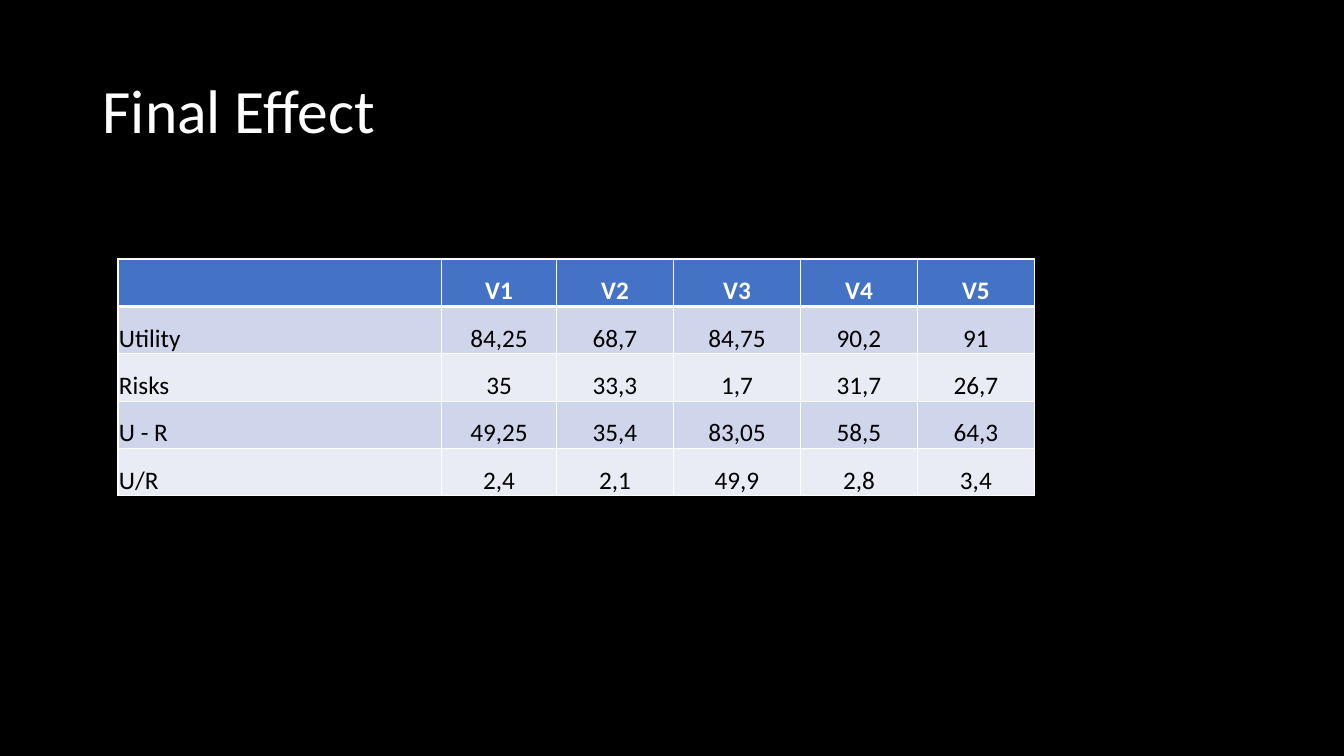
from dataclasses import dataclass

from lxml import etree
from pptx import Presentation
from pptx import util as u
from pptx.dml.color import RGBColor
from pptx.enum import text
from pptx.oxml import ns

HEADING = "Final Effect"
EFFECTS = [
    ("", "V1", "V2", "V3", "V4", "V5"),
    ("Utility", "84,25", "68,7", "84,75", "90,2", "91"),
    ("Risks", "35", "33,3", "1,7", "31,7", "26,7"),
    ("U - R", "49,25", "35,4", "83,05", "58,5", "64,3"),
    ("U/R", "2,4", "2,1", "49,9", "2,8", "3,4"),
]
COLUMN_WIDTHS = (3.21, 1.14, 1.16, 1.26, 1.16, 1.16)
ROW_HEIGHT = 0.47
SLIDE_SIZE = (13.33, 7.5)
HEADING_BOX = (0.92, 0.4, 11.5, 1.45)
TABLE_CORNER = (1.17, 2.57)


@dataclass(frozen=True)
class Theme:
    font: str = "Calibri"
    heading_size: int = 44
    cell_size: int = 18
    background: str = "000000"
    light: str = "FFFFFF"
    dark: str = "000000"
    header: str = "4472C4"
    bands: tuple = ("CFD5EA", "E9EBF5")
    rule: int = 1
    header_rule: int = 3
    inset: float = 0.01


THEME = Theme()


def style(paragraph, size, color, bold=False):
    font = paragraph.font
    font.name, font.size, font.bold = THEME.font, u.Pt(size), bold
    font.color.rgb = RGBColor.from_string(color)


def add_border(cell, side, width):
    line = etree.SubElement(
        cell._tc.get_or_add_tcPr(), ns.qn(f"a:ln{side}"), w=str(u.Pt(width))
    )
    fill = etree.SubElement(line, ns.qn("a:solidFill"))
    etree.SubElement(fill, ns.qn("a:srgbClr"), val=THEME.light)


def add_heading(slide):
    frame = slide.shapes.add_textbox(*map(u.Inches, HEADING_BOX)).text_frame
    frame.word_wrap = True
    frame.vertical_anchor = text.MSO_ANCHOR.MIDDLE
    heading = frame.paragraphs[0]
    heading.text = HEADING
    heading.line_spacing = 0.9
    style(heading, THEME.heading_size, THEME.light)


def fill_cell(cell, value, row, column):
    is_header = row == 0
    cell.margin_left = cell.margin_right = cell.margin_top = u.Inches(THEME.inset)
    cell.margin_bottom = 0
    cell.vertical_anchor = text.MSO_ANCHOR.BOTTOM
    top = THEME.header_rule if row == 1 else THEME.rule
    bottom = THEME.header_rule if is_header else THEME.rule
    for side, width in zip("LRTB", (THEME.rule, THEME.rule, top, bottom)):
        add_border(cell, side, width)
    band = THEME.header if is_header else THEME.bands[(row - 1) % 2]
    cell.fill.solid()
    cell.fill.fore_color.rgb = RGBColor.from_string(band)
    entry = cell.text_frame.paragraphs[0]
    if value:
        entry.text = value
    entry.alignment = text.PP_ALIGN.CENTER if column else text.PP_ALIGN.LEFT
    style(entry, THEME.cell_size, THEME.light if is_header else THEME.dark, is_header)


def add_effects(slide):
    extent = (sum(COLUMN_WIDTHS), ROW_HEIGHT * len(EFFECTS))
    effects = slide.shapes.add_table(
        len(EFFECTS), len(COLUMN_WIDTHS), *map(u.Inches, TABLE_CORNER + extent)
    ).table
    for column, width in zip(effects.columns, COLUMN_WIDTHS):
        column.width = u.Inches(width)
    for r, values in enumerate(EFFECTS):
        effects.rows[r].height = u.Inches(ROW_HEIGHT)
        for c, value in enumerate(values):
            fill_cell(effects.cell(r, c), value, r, c)


def main():
    deck = Presentation()
    deck.slide_width, deck.slide_height = map(u.Inches, SLIDE_SIZE)
    slide = deck.slides.add_slide(deck.slide_layouts[6])
    slide.background.fill.solid()
    slide.background.fill.fore_color.rgb = RGBColor.from_string(THEME.background)
    add_heading(slide)
    add_effects(slide)
    deck.save("out.pptx")


if __name__ == "__main__":
    main()
